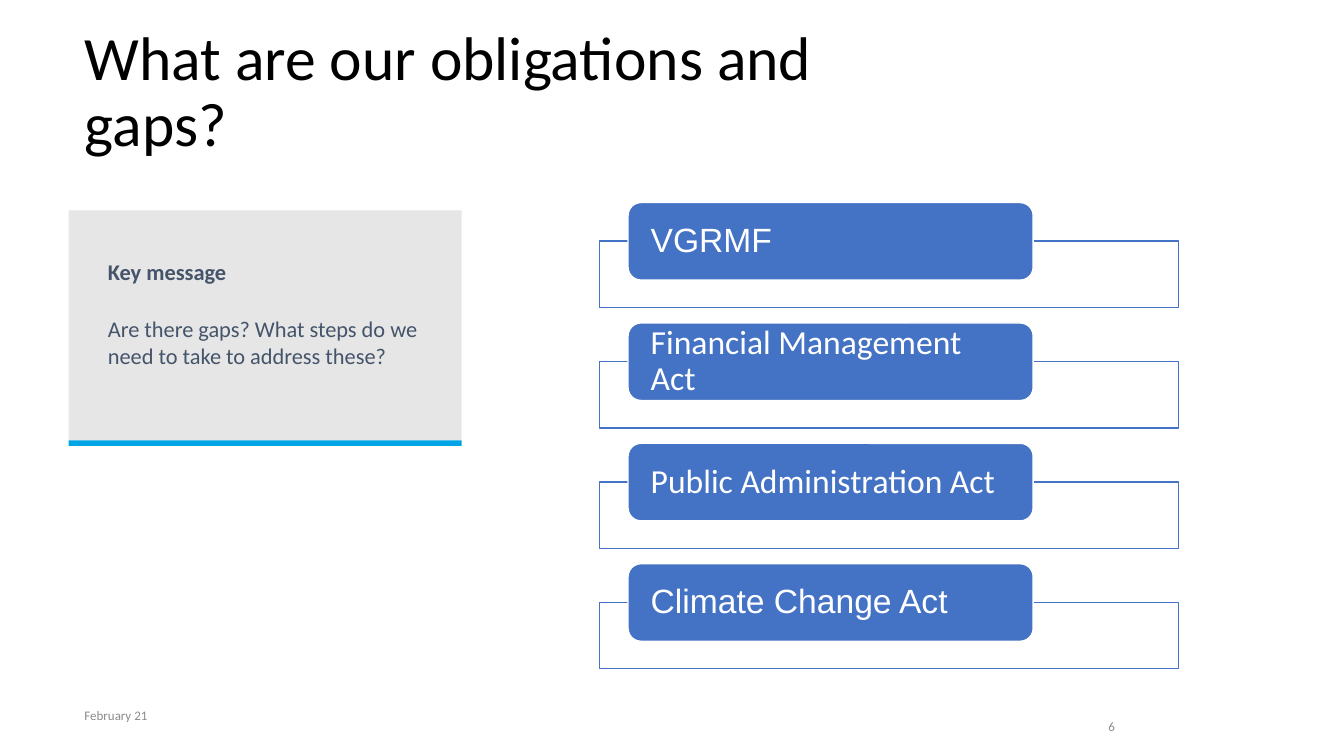
from lxml import etree
from pptx import Presentation
from pptx.dml.color import RGBColor
from pptx.enum.shapes import MSO_SHAPE
from pptx.enum.text import MSO_ANCHOR, MSO_AUTO_SIZE, PP_ALIGN
from pptx.oxml.ns import qn
from pptx.util import Pt

BLACK = RGBColor(0x00, 0x00, 0x00)
WHITE = RGBColor(0xFF, 0xFF, 0xFF)
BLUE = RGBColor(0x44, 0x72, 0xC4)
CYAN = RGBColor(0x00, 0xA4, 0xE4)
PANEL_GREY = RGBColor(0xE7, 0xE6, 0xE6)
FOOTER_GREY = RGBColor(0x8C, 0x8C, 0x8C)
SLATE = RGBColor(0x44, 0x54, 0x6A)

RECTANGLE = MSO_SHAPE.RECTANGLE
ROUNDED = MSO_SHAPE.ROUNDED_RECTANGLE
MIDDLE = MSO_ANCHOR.MIDDLE
TOP = MSO_ANCHOR.TOP
LEFT = PP_ALIGN.LEFT
RIGHT = PP_ALIGN.RIGHT
NO_AUTOFIT = MSO_AUTO_SIZE.NONE

OBLIGATIONS = [
    ("VGRMF", "Arial"),
    ("Financial Management Act", "Calibri"),
    ("Public Administration Act", "Calibri"),
    ("Climate Change Act", "Arial"),
]
ROW_TOP = 144.7
ROW_PITCH = 86


def format_paragraph(paragraph, size, color, font="Calibri", align=LEFT, bold=False):
    paragraph.alignment = align
    paragraph.font.name = font
    paragraph.font.size = Pt(size)
    paragraph.font.color.rgb = color
    paragraph.font.bold = bold


def set_frame(frame, anchor, horizontal=7.2, vertical=3.6):
    frame.word_wrap = True
    frame.auto_size = NO_AUTOFIT
    frame.vertical_anchor = anchor
    frame.margin_left = frame.margin_right = Pt(horizontal)
    frame.margin_top = frame.margin_bottom = Pt(vertical)


def add_box(slide, kind, left, top, width, height, fill, line=None):
    shape = slide.shapes.add_shape(kind, Pt(left), Pt(top), Pt(width), Pt(height))
    shape.shadow.inherit = False
    shape.fill.solid()
    shape.fill.fore_color.rgb = fill
    if line is None:
        shape.line.fill.background()
    else:
        shape.line.color.rgb = line
        shape.line.width = Pt(1)
    return shape


def set_opacity(shape, percent):
    color = shape.fill._xPr.find(qn("a:solidFill"))[0]
    etree.SubElement(color, qn("a:alpha")).set("val", str(percent * 1000))


def add_title(slide, text):
    title = slide.shapes.title
    title.left, title.top = Pt(53.3), Pt(21.6)
    title.width, title.height = Pt(642.2), Pt(90.7)
    set_frame(title.text_frame, MIDDLE)
    title.text_frame.text = text
    paragraph = title.text_frame.paragraphs[0]
    format_paragraph(paragraph, 44, BLACK)
    paragraph.line_spacing = 0.9


def add_footer(slide, text, left, top, width, align):
    box = slide.shapes.add_textbox(Pt(left), Pt(top), Pt(width), Pt(17.3))
    set_frame(box.text_frame, MIDDLE)
    box.text_frame.text = text
    format_paragraph(box.text_frame.paragraphs[0], 9.3, FOOTER_GREY, align=align)


def add_key_message(slide, heading, message):
    add_box(slide, RECTANGLE, 49, 150.2, 280.8, 164.4, PANEL_GREY)
    add_box(slide, RECTANGLE, 49, 314.6, 280.8, 3.9, CYAN)
    box = slide.shapes.add_textbox(Pt(74.2), Pt(181.4), Pt(236.9), Pt(113))
    frame = box.text_frame
    set_frame(frame, TOP, 2.9, 2.9)
    frame.text = heading
    format_paragraph(frame.paragraphs[0], 16, SLATE, bold=True)
    frame.paragraphs[0].space_after = Pt(21.5)
    body = frame.add_paragraph()
    body.text = message
    format_paragraph(body, 16, SLATE)


def add_obligation(slide, text, font, top):
    frame_box = add_box(slide, RECTANGLE, 428.4, top + 27.5, 413.3, 47.5, WHITE, BLUE)
    set_opacity(frame_box, 90)
    label = add_box(slide, ROUNDED, 448.6, top, 289.4, 55.4, BLUE, WHITE)
    set_frame(label.text_frame, MIDDLE, 13.5, 0)
    label.text_frame.text = text
    paragraph = label.text_frame.paragraphs[0]
    format_paragraph(paragraph, 24, WHITE, font)
    paragraph.line_spacing = 0.9


def main():
    presentation = Presentation()
    presentation.slide_width = Pt(960)
    presentation.slide_height = Pt(540)
    slide = presentation.slides.add_slide(presentation.slide_layouts[5])

    # Title and key message panel
    add_title(slide, "What are our obligations and gaps?")
    add_key_message(
        slide,
        "Key message",
        "Are there gaps? What steps do we need to take to address these?",
    )

    # Obligation list
    for index, (text, font) in enumerate(OBLIGATIONS):
        add_obligation(slide, text, font, ROW_TOP + index * ROW_PITCH)

    # Footer
    add_footer(slide, "February 21", 53.3, 502.6, 113, LEFT)
    add_footer(slide, "6", 746.6, 510.5, 56.9, RIGHT)

    presentation.save("out.pptx")


if __name__ == "__main__":
    main()
